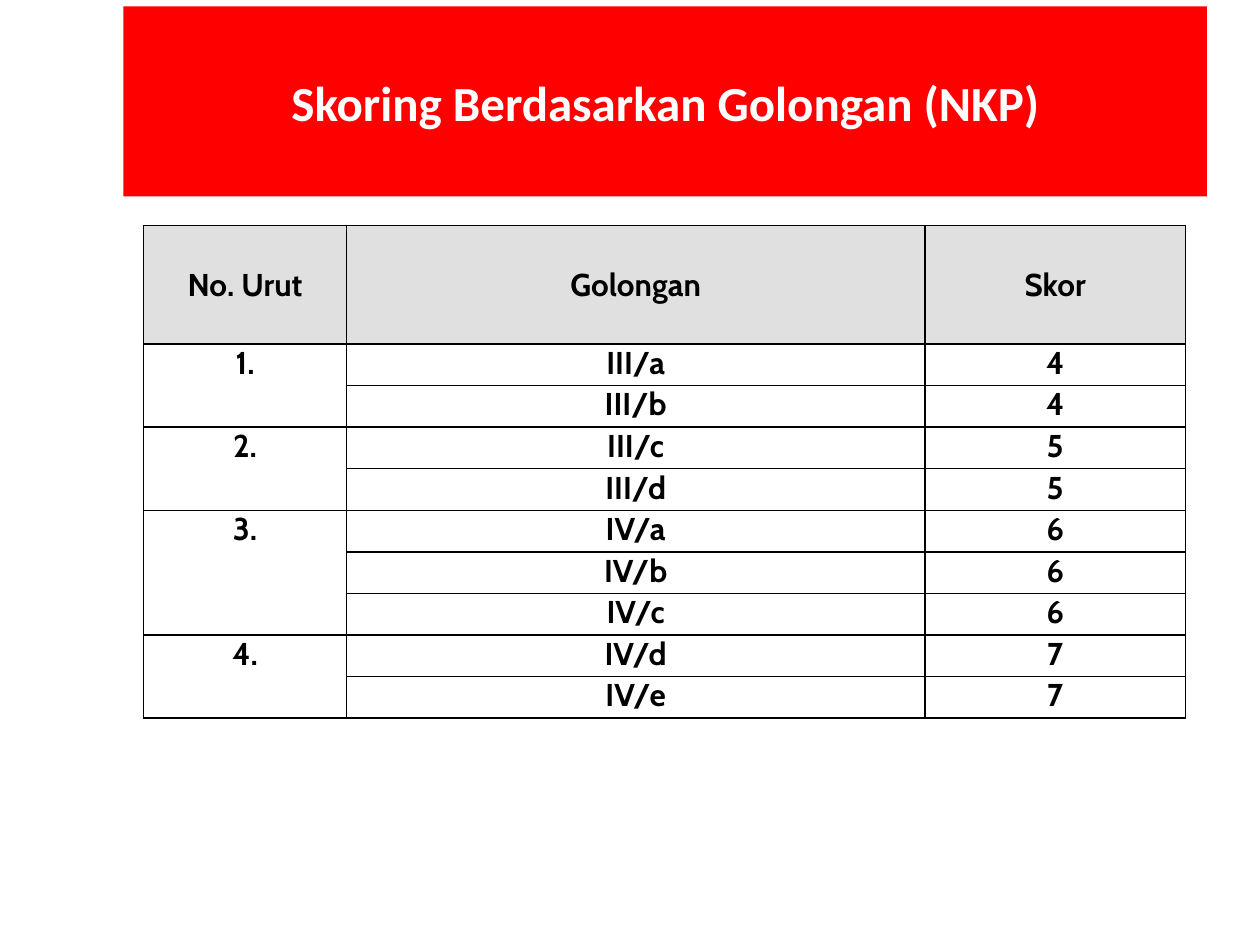
from pptx import Presentation
from pptx.dml.color import RGBColor
from pptx.enum.shapes import MSO_SHAPE
from pptx.enum.text import MSO_ANCHOR, PP_ALIGN
from pptx.oxml.ns import qn
from pptx.util import Inches, Pt
from lxml import etree

RECTANGLE = MSO_SHAPE.RECTANGLE
TOP, MIDDLE = MSO_ANCHOR.TOP, MSO_ANCHOR.MIDDLE
CENTER = PP_ALIGN.CENTER

COLORS = {"banner": "FF0000", "header": "E0E0E0", "text": "000000",
          "title": "FFFFFF", "border": "000000"}
HEADERS = ["No. Urut", "Golongan", "Skor"]
GROUPS = [
    (4, ["III/a", "III/b"]),
    (5, ["III/c", "III/d"]),
    (6, ["IV/a", "IV/b", "IV/c"]),
    (7, ["IV/d", "IV/e"]),
]
COLUMN_WIDTHS = [1.61, 4.59, 2.07]
HEADER_HEIGHT, ROW_HEIGHT = 0.94, 0.33


def write_text(text_frame, text, font="Cabin", size=18, color="text"):
    paragraph = text_frame.paragraphs[0]
    paragraph.alignment = CENTER
    run = paragraph.add_run()
    run.text = text
    run.font.name = font
    run.font.size = Pt(size)
    run.font.bold = True
    run.font.color.rgb = RGBColor.from_string(COLORS[color])


class SlideBuilder:
    def __init__(self, slide, colors):
        self.slide = slide
        self.colors = colors

    def banner(self, text, left, top, width, height):
        shape = self.slide.shapes.add_shape(
            RECTANGLE, Inches(left), Inches(top), Inches(width), Inches(height))
        shape.shadow.inherit = False
        shape.fill.solid()
        shape.fill.fore_color.rgb = RGBColor.from_string(self.colors["banner"])
        shape.line.fill.background()
        shape.text_frame.word_wrap = True
        shape.text_frame.vertical_anchor = MIDDLE
        write_text(shape.text_frame, text, font="Calibri", size=28, color="title")

    def borders(self, cell, hidden=()):
        properties = cell._tc.get_or_add_tcPr()
        for side in "LRTB":
            line = etree.SubElement(properties, qn(f"a:ln{side}"), w=str(Pt(1)))
            if side in hidden:
                etree.SubElement(line, qn("a:noFill"))
            else:
                fill = etree.SubElement(line, qn("a:solidFill"))
                etree.SubElement(fill, qn("a:srgbClr"), val=self.colors["border"])

    def cell(self, cell, text, header=False, hidden=()):
        cell.margin_left = cell.margin_right = Inches(0.07)
        cell.margin_top = cell.margin_bottom = 0
        cell.vertical_anchor = MIDDLE if header else TOP
        self.borders(cell, hidden)
        if header:
            cell.fill.solid()
            cell.fill.fore_color.rgb = RGBColor.from_string(self.colors["header"])
        else:
            cell.fill.background()
        if text:
            write_text(cell.text_frame, text)

    def score_table(self, left, top):
        row_count = sum(len(grades) for _, grades in GROUPS)
        table = self.slide.shapes.add_table(
            row_count + 1, len(HEADERS), Inches(left), Inches(top),
            Inches(sum(COLUMN_WIDTHS)),
            Inches(HEADER_HEIGHT + row_count * ROW_HEIGHT)).table
        table.horz_banding = False
        for column, width in zip(table.columns, COLUMN_WIDTHS):
            column.width = Inches(width)
        for index, row in enumerate(table.rows):
            row.height = Inches(ROW_HEIGHT if index else HEADER_HEIGHT)
        for column, text in enumerate(HEADERS):
            self.cell(table.cell(0, column), text, header=True)
        row = 1
        for number, (score, grades) in enumerate(GROUPS, 1):
            for position, grade in enumerate(grades):
                first, last = position == 0, position == len(grades) - 1
                hidden = ("" if first else "T") + ("" if last else "B")
                self.cell(table.cell(row, 0), f"{number}." if first else "", hidden=hidden)
                self.cell(table.cell(row, 1), grade)
                self.cell(table.cell(row, 2), str(score))
                row += 1


def main():
    presentation = Presentation()
    presentation.slide_width = Inches(10)
    presentation.slide_height = Inches(7.5)
    slide = presentation.slides.add_slide(presentation.slide_layouts[6])
    builder = SlideBuilder(slide, COLORS)
    builder.score_table(1.14, 1.79)
    builder.banner("Skoring Berdasarkan Golongan (NKP)", 0.98, 0.05, 8.6, 1.51)
    presentation.save("out.pptx")


if __name__ == "__main__":
    main()
